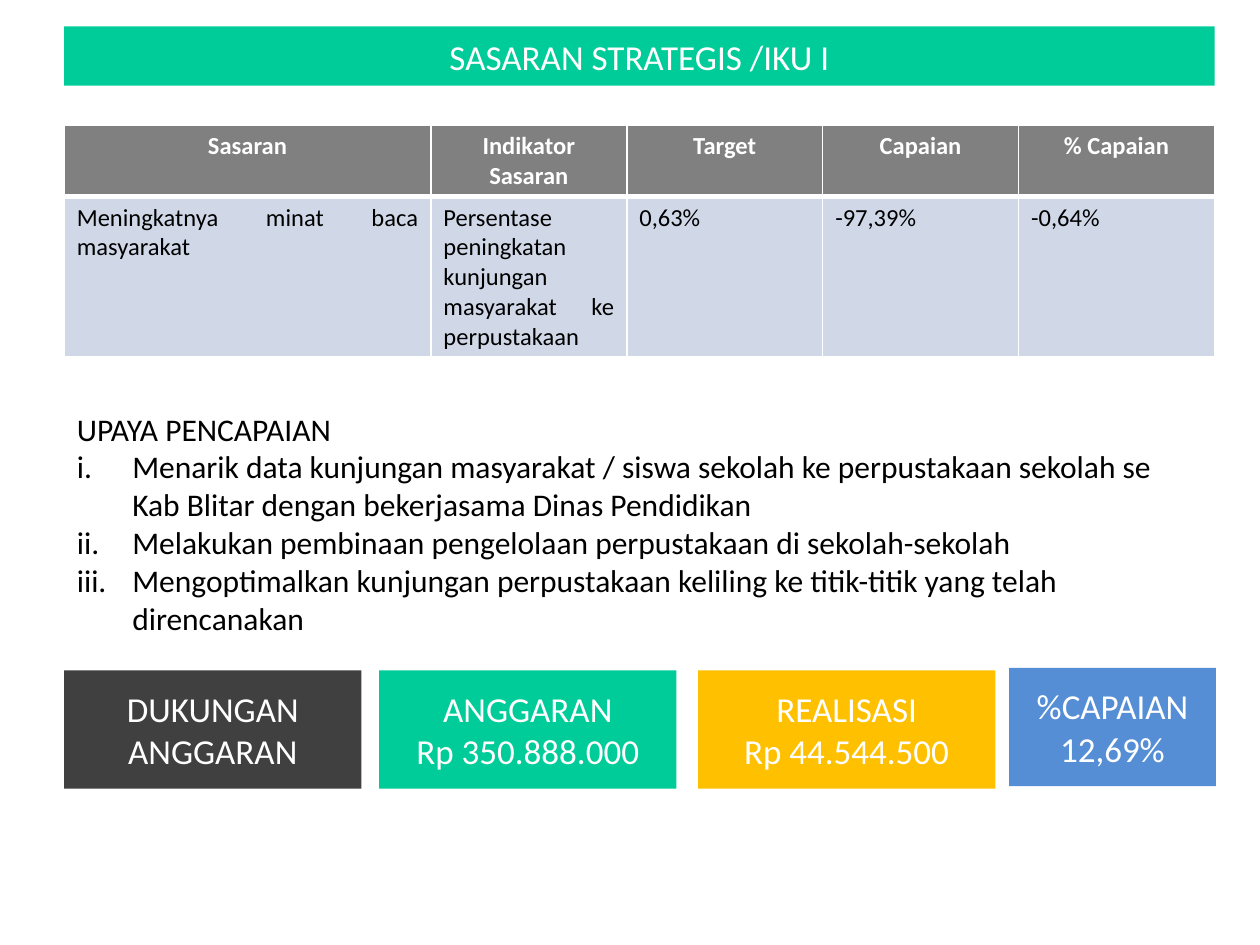
from dataclasses import dataclass

from lxml.etree import SubElement
from pptx import Presentation
from pptx.dml.color import RGBColor
from pptx.enum.shapes import MSO_SHAPE as Preset
from pptx.enum.text import MSO_ANCHOR as Anchor, MSO_AUTO_SIZE as AutoSize, PP_ALIGN as Align
from pptx.oxml.ns import qn
from pptx.util import Inches, Pt

GRID_COLUMNS, GRID_ROWS = 100, 75
UNIT = Inches(0.1)
FONT = "Calibri"
LEFT, WIDTH = 5.1, 91.3
WHITE, BLACK, GREEN = "FFFFFF", "000000", "00CC99"
HEADER_FILL, BODY_FILL = "808080", "D0D8E8"
HEADER_RULE, THIN_RULE = 3, 1


@dataclass(frozen=True)
class Box:
    column: float
    row: float
    columns: float
    rows: float

    def lengths(self) -> tuple:
        return tuple(round(n * UNIT) for n in (self.column, self.row, self.columns, self.rows))


@dataclass(frozen=True)
class Card:
    text: str
    fill: str
    box: Box


HEADERS = ["Sasaran", "Indikator Sasaran", "Target", "Capaian", "% Capaian"]
RESULTS = [
    "Meningkatnya minat baca masyarakat",
    "Persentase peningkatan kunjungan masyarakat ke perpustakaan",
    "0,63%",
    "-97,39%",
    "-0,64%",
]
COLUMN_SPANS = [29.1] + [15.55] * 4
ROW_SPANS = [5.7, 12.6]

EFFORTS = [
    "Menarik data kunjungan masyarakat / siswa sekolah ke perpustakaan sekolah se "
    "Kab Blitar dengan bekerjasama Dinas Pendidikan",
    "Melakukan pembinaan pengelolaan perpustakaan di sekolah-sekolah",
    "Mengoptimalkan kunjungan perpustakaan keliling ke titik-titik yang telah direncanakan",
]

CARDS = [
    Card("DUKUNGAN ANGGARAN", "404040", Box(LEFT, 53.2, 23.6, 9.4)),
    Card("ANGGARAN\nRp 350.888.000", GREEN, Box(30.1, 53.2, 23.6, 9.4)),
    Card("REALISASI\nRp 44.544.500", "FFC000", Box(55.4, 53.2, 23.6, 9.4)),
    Card("%CAPAIAN\n12,69%", "558ED5", Box(80.1, 53, 16.4, 9.4)),
]


def rgb(value: str) -> RGBColor:
    return RGBColor.from_string(value)


def paint(target, color: str) -> None:
    target.fill.solid()
    target.fill.fore_color.rgb = rgb(color)


def place(shape, box: Box) -> None:
    shape.left, shape.top, shape.width, shape.height = box.lengths()


def style_text(frame, size: int, color: str, align: Align, bold: bool = False) -> None:
    for paragraph in frame.paragraphs:
        paragraph.alignment = align
        paragraph.space_before = Pt(0)
        font = paragraph.font
        font.name, font.size, font.bold = FONT, Pt(size), bold
        font.color.rgb = rgb(color)


def add_banner(slide, text: str, box: Box) -> None:
    banner = slide.shapes.title
    place(banner, box)
    paint(banner, GREEN)
    frame = banner.text_frame
    frame.text = text
    frame.auto_size = AutoSize.NONE
    frame.vertical_anchor = Anchor.MIDDLE
    style_text(frame, 20, WHITE, Align.CENTER)


def set_borders(cell, top: float, bottom: float) -> None:
    properties = cell._tc.get_or_add_tcPr()
    widths = {"a:lnL": THIN_RULE, "a:lnR": THIN_RULE, "a:lnT": top, "a:lnB": bottom}
    for tag, width in widths.items():
        line = SubElement(properties, qn(tag), w=str(Pt(width)))
        SubElement(SubElement(line, qn("a:solidFill")), qn("a:srgbClr"), val=WHITE)


def add_results(slide, box: Box) -> None:
    table = slide.shapes.add_table(2, len(HEADERS), *box.lengths()).table
    table.horz_banding = False
    for column, span in zip(table.columns, COLUMN_SPANS):
        column.width = round(span * UNIT)
    for row, span in zip(table.rows, ROW_SPANS):
        row.height = round(span * UNIT)
    for index, (header, result) in enumerate(zip(HEADERS, RESULTS)):
        head, body = table.cell(0, index), table.cell(1, index)
        head.text, body.text = header, result
        set_borders(head, THIN_RULE, HEADER_RULE)
        set_borders(body, HEADER_RULE, THIN_RULE)
        paint(head, HEADER_FILL)
        paint(body, BODY_FILL)
        style_text(head.text_frame, 14, WHITE, Align.CENTER, bold=True)
        style_text(body.text_frame, 14, BLACK, Align.JUSTIFY)


def set_bullet(paragraph, indent: int, numbered: bool) -> None:
    properties = paragraph._p.get_or_add_pPr()
    properties.set("marL", str(indent))
    properties.set("indent", str(-indent))
    if numbered:
        SubElement(properties, qn("a:buFont"), typeface="+mj-lt")
        SubElement(properties, qn("a:buAutoNum"), type="romanLcPeriod")
    else:
        SubElement(properties, qn("a:buNone"))


def add_efforts(slide, heading: str, box: Box) -> None:
    body = slide.placeholders[1]
    place(body, box)
    frame = body.text_frame
    frame.text = "\n".join([heading, *EFFORTS])
    frame.word_wrap = True
    frame.auto_size = AutoSize.SHAPE_TO_FIT_TEXT
    frame.vertical_anchor = Anchor.TOP
    title, *items = frame.paragraphs
    set_bullet(title, 0, numbered=False)
    for item in items:
        set_bullet(item, Inches(0.44), numbered=True)
    style_text(frame, 18, BLACK, Align.LEFT)


def add_card(slide, card: Card) -> None:
    shape = slide.shapes.add_shape(Preset.RECTANGLE, *card.box.lengths())
    shape.shadow.inherit = False
    paint(shape, card.fill)
    shape.line.fill.background()
    frame = shape.text_frame
    frame.text = card.text
    frame.word_wrap = True
    frame.vertical_anchor = Anchor.MIDDLE
    style_text(frame, 20, WHITE, Align.CENTER)


def main() -> None:
    deck = Presentation()
    deck.slide_width, deck.slide_height = GRID_COLUMNS * UNIT, GRID_ROWS * UNIT
    slide = deck.slides.add_slide(deck.slide_layouts[1])
    add_banner(slide, "SASARAN STRATEGIS /IKU I", Box(LEFT, 2.1, WIDTH, 4.7))
    add_results(slide, Box(LEFT, 9.9, WIDTH, sum(ROW_SPANS)))
    add_efforts(slide, "UPAYA PENCAPAIAN", Box(LEFT, 32, WIDTH, 19.2))
    for card in CARDS:
        add_card(slide, card)
    deck.save("out.pptx")


if __name__ == "__main__":
    main()
